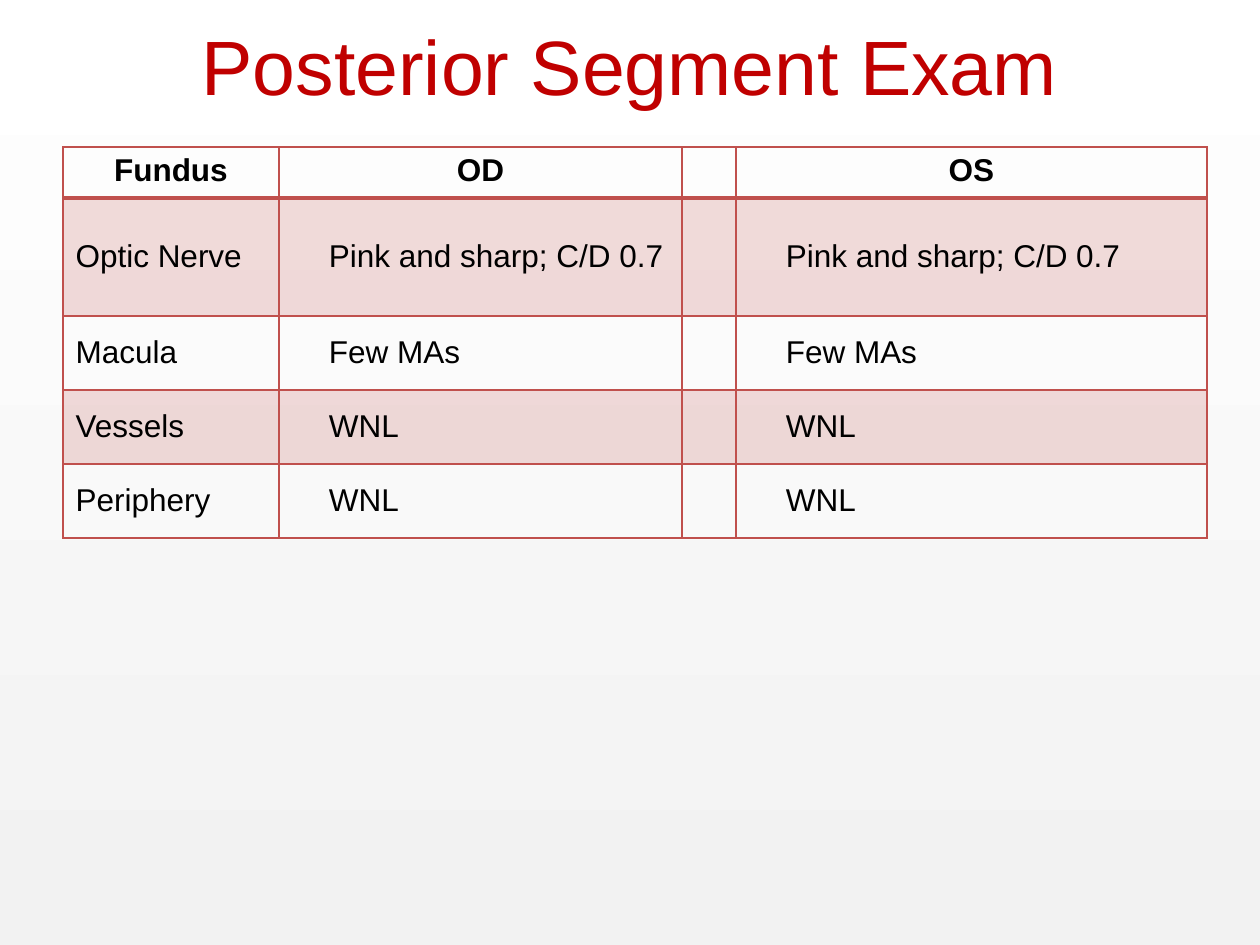
import dataclasses

import pptx
import pptx.dml.color
import pptx.enum.text
import pptx.oxml
import pptx.oxml.ns
import pptx.util

PX = 914400 // 126
COLORS = {"title": "C00000", "text": "000000", "line": "C0504D", "band": "C0504D",
          "low": "F2F2F2", "high": "FFFFFF"}
FONT = "Arial"
PLAIN = "{2D5ABB26-0587-4C30-8999-92F81FD0307C}"
ALIGN = pptx.enum.text.PP_ALIGN
ANCHOR = pptx.enum.text.MSO_ANCHOR


@dataclasses.dataclass
class Row:
    high: int
    texts: tuple[str, str, str, str]
    head: bool = False
    band: bool = False


WIDTHS = (216, 403, 54, 471)
ROWS = (
    Row(51, ("Fundus", "OD", "", "OS"), head=True),
    Row(118, ("Optic Nerve", "Pink and sharp; C/D 0.7", "", "Pink and sharp; C/D 0.7"), band=True),
    Row(74, ("Macula", "Few MAs", "", "Few MAs")),
    Row(74, ("Vessels", "WNL", "", "WNL"), band=True),
    Row(74, ("Periphery", "WNL", "", "WNL")),
)


def px(num: int) -> pptx.util.Emu:
    return pptx.util.Emu(num * PX)


def color(name: str) -> pptx.dml.color.RGBColor:
    return pptx.dml.color.RGBColor.from_string(COLORS[name])


def style(para, size: int, name: str, bold: bool, align) -> None:
    para.alignment = align
    para.font.name = FONT
    para.font.size = pptx.util.Pt(size)
    para.font.bold = bold
    para.font.color.rgb = color(name)


def border(cell, side: str, width: int) -> None:
    space = pptx.oxml.ns.nsdecls("a")
    line = pptx.oxml.parse_xml(
        f'<a:ln{side} {space} w="{pptx.util.Pt(width)}"><a:solidFill>'
        f'<a:srgbClr val="{COLORS["line"]}"/></a:solidFill></a:ln{side}>')
    cell._tc.get_or_add_tcPr().append(line)


def tint(cell, alpha: int) -> None:
    cell.fill.solid()
    cell.fill.fore_color.rgb = color("band")
    tone = cell._tc.tcPr.find(".//" + pptx.oxml.ns.qn("a:solidFill") + "[last()]")
    fill = cell._tc.tcPr.findall(pptx.oxml.ns.qn("a:solidFill"))[0]
    tone = fill.find(pptx.oxml.ns.qn("a:srgbClr"))
    space = pptx.oxml.ns.nsdecls("a")
    tone.append(pptx.oxml.parse_xml(f'<a:alpha {space} val="{alpha * 1000}"/>'))


def draw_cell(cell, row: Row, col: int, first: bool) -> None:
    tops = 2 if first else 1
    ends = 2 if row.head else 1
    for side, width in (("L", 1), ("R", 1), ("T", tops), ("B", ends)):
        border(cell, side, width)
    if row.band:
        tint(cell, 20)
    else:
        cell.fill.background()
    if not row.head:
        cell.vertical_anchor = ANCHOR.MIDDLE
        if col in (1, 3):
            cell.margin_left = px(50)
    cell.text = row.texts[col]
    align = ALIGN.CENTER if row.head else ALIGN.LEFT
    style(cell.text_frame.paragraphs[0], 18, "text", row.head, align)


def draw_table(slide) -> None:
    frame = slide.shapes.add_table(len(ROWS), len(WIDTHS), px(63), px(147),
                                   px(sum(WIDTHS)), px(sum(row.high for row in ROWS)))
    table = frame.table
    table.first_row = False
    table.horz_banding = False
    table._tbl.tblPr.find(pptx.oxml.ns.qn("a:tableStyleId")).text = PLAIN
    for col, width in enumerate(WIDTHS):
        table.columns[col].width = px(width)
    for pos, row in enumerate(ROWS):
        table.rows[pos].height = px(row.high)
        for col in range(len(WIDTHS)):
            draw_cell(table.cell(pos, col), row, col, pos == 1)


def draw_title(slide) -> None:
    title = slide.shapes.title
    title.left, title.top, title.width, title.height = px(63), px(-14), px(1134), px(158)
    title.text_frame.text = "Posterior Segment Exam"
    title.text_frame.vertical_anchor = ANCHOR.MIDDLE
    style(title.text_frame.paragraphs[0], 44, "title", False, ALIGN.CENTER)


def draw_back(slide) -> None:
    fill = slide.background.fill
    fill.gradient()
    fill.gradient_angle = 90
    for stop, name in zip(fill.gradient_stops, ("low", "high")):
        stop.color.rgb = color(name)


def main() -> None:
    deck = pptx.Presentation()
    deck.slide_width, deck.slide_height = px(1260), px(945)
    slide = deck.slides.add_slide(deck.slide_layouts[5])
    draw_back(slide)
    draw_title(slide)
    draw_table(slide)
    deck.save("out.pptx")


if __name__ == "__main__":
    main()
